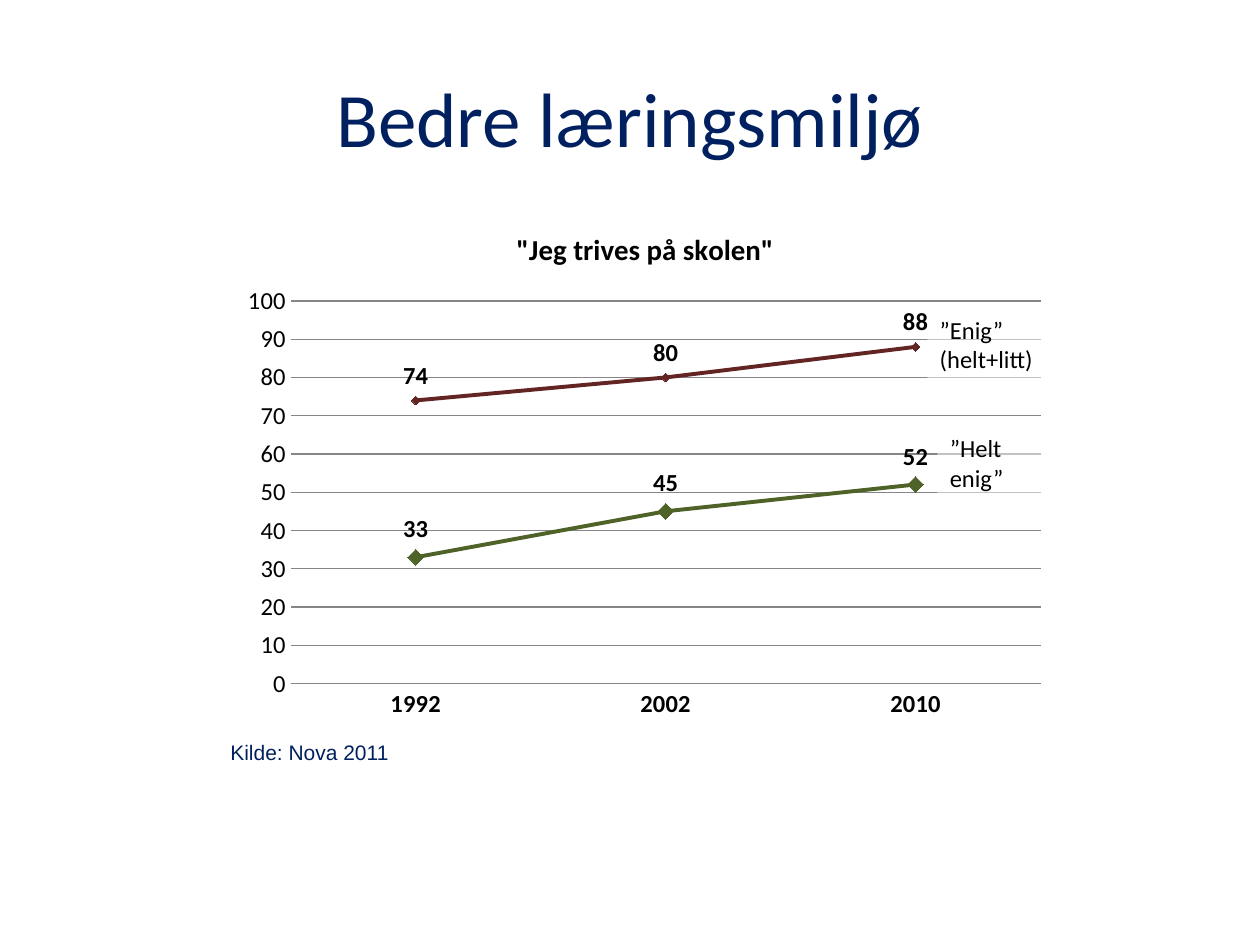
from lxml import etree
from pptx import Presentation
from pptx.chart import data
from pptx.dml.color import RGBColor
from pptx.enum import chart as ch, text
from pptx.oxml import parse_xml
from pptx.oxml.ns import nsdecls, qn
from pptx.util import Inches, Pt

COLORS = {"navy": "002060", "black": "000000", "white": "FFFFFF",
          "green": "4F6228", "red": "632523", "grid": "868686"}
YEARS = ["1992", "2002", "2010"]
SERIES = [("Series 1", (33, 45, 52), "green", ch.XL_MARKER_STYLE.DIAMOND, 9),
          ("Series 2", (74, 80, 88), "red", ch.XL_MARKER_STYLE.AUTOMATIC, 5)]


def rgb(name):
    return RGBColor.from_string(COLORS[name])


def set_font(font, size, color="black", name="Calibri", bold=None):
    font.name, font.size, font.bold = name, Pt(size), bold
    font.color.rgb = rgb(color)


def add_title(s, words):
    sp = s.shapes.title
    sp.left, sp.top, sp.width, sp.height = map(Inches, (0.5, 0.3, 9, 1.25))
    tf = sp.text_frame
    tf.text = words
    tf.vertical_anchor = text.MSO_ANCHOR.MIDDLE
    p = tf.paragraphs[0]
    p.alignment = text.PP_ALIGN.CENTER
    set_font(p.font, 44, "navy")


def add_text(s, words, box, size, color="black", name="Calibri", veiled=False):
    sp = s.shapes.add_textbox(*map(Inches, box))
    if veiled:
        sp.fill.solid()
        sp.fill.fore_color.rgb = rgb("white")
        solid = sp.fill._xPr.find(qn("a:solidFill"))
        etree.SubElement(solid[0], qn("a:alpha"), val="50000")
    tf = sp.text_frame
    tf.word_wrap = True
    tf.text = words
    set_font(tf.paragraphs[0].font, size, color, name)


def style_series(ser, color, marker, size):
    ser.smooth = False
    ser.format.line.color.rgb = rgb(color)
    ser.format.line.width = Pt(2.25)
    ser.marker.style, ser.marker.size = marker, size
    ser.marker.format.fill.solid()
    ser.marker.format.fill.fore_color.rgb = rgb(color)
    ser.marker.format.line.color.rgb = rgb(color)
    labels = ser.data_labels
    labels.show_value = True
    labels.position = ch.XL_LABEL_POSITION.ABOVE
    labels.number_format, labels.number_format_is_linked = "0", False
    set_font(labels.font, 14, bold=True)


def style_axes(chart):
    cat, val = chart.category_axis, chart.value_axis
    for axis in (cat, val):
        axis.major_tick_mark = axis.minor_tick_mark = ch.XL_TICK_MARK.NONE
    set_font(cat.tick_labels.font, 14, bold=True)
    cat.format.line.color.rgb = rgb("grid")
    val.minimum_scale, val.maximum_scale, val.major_unit = 0, 100, 10
    val.format.line.fill.background()
    val.major_gridlines.format.line.color.rgb = rgb("grid")
    val.major_gridlines.format.line.width = Pt(0.75)
    val.tick_labels.number_format = "0"
    val.tick_labels.number_format_is_linked = False


def set_layout(chart, x, y, w, h):
    plot_area = chart._chartSpace.chart.plotArea
    for old in plot_area.findall(qn("c:layout")):
        plot_area.remove(old)
    plot_area.insert(0, parse_xml(
        f'<c:layout {nsdecls("c")}><c:manualLayout><c:layoutTarget val="inner"/>'
        f'<c:xMode val="edge"/><c:yMode val="edge"/><c:x val="{x}"/><c:y val="{y}"/>'
        f'<c:w val="{w}"/><c:h val="{h}"/></c:manualLayout></c:layout>'))


def set_background(chart):
    chart._chartSpace.chart.addnext(parse_xml(
        f'<c:spPr {nsdecls("c", "a")}><a:solidFill><a:srgbClr val="{COLORS["white"]}">'
        '<a:alpha val="50000"/></a:srgbClr></a:solidFill><a:ln><a:noFill/></a:ln></c:spPr>'))


def add_line_chart(s, title, box):
    cd = data.CategoryChartData(number_format="0")
    cd.categories = YEARS
    for name, values, *_ in SERIES:
        cd.add_series(name, values)
    chart = s.shapes.add_chart(ch.XL_CHART_TYPE.LINE_MARKERS,
                               *map(Inches, box), cd).chart
    set_font(chart.font, 14)
    chart.has_legend = False
    chart.has_title = True
    tf = chart.chart_title.text_frame
    tf.text = title
    set_font(tf.paragraphs[0].font, 16.5, bold=True)
    chart.chart_title.include_in_layout = False
    plot = chart.plots[0]
    plot.vary_by_categories = False
    for ser, (_, _, color, marker, size) in zip(plot.series, SERIES):
        style_series(ser, color, marker, size)
    style_axes(chart)
    set_layout(chart, 0.07, 0.18, 0.91, 0.73)
    set_background(chart)


def main():
    prs = Presentation()
    prs.slide_width, prs.slide_height = Inches(10), Inches(7.5)
    s = prs.slides.add_slide(prs.slide_layouts[5])
    add_title(s, "Bedre læringsmiljø")
    add_text(s, "Kilde: Nova 2011", (1.73, 5.82, 2.26, 0.3), 12, "navy", "Arial")
    add_line_chart(s, '"Jeg trives på skolen"', (1.85, 1.64, 6.54, 4.16))
    add_text(s, "”Enig” (helt+litt)", (7.36, 2.45, 1.02, 0.57), 14, veiled=True)
    add_text(s, "”Helt enig”", (7.44, 3.39, 0.94, 0.57), 14, veiled=True)
    prs.save("out.pptx")


if __name__ == "__main__":
    main()
